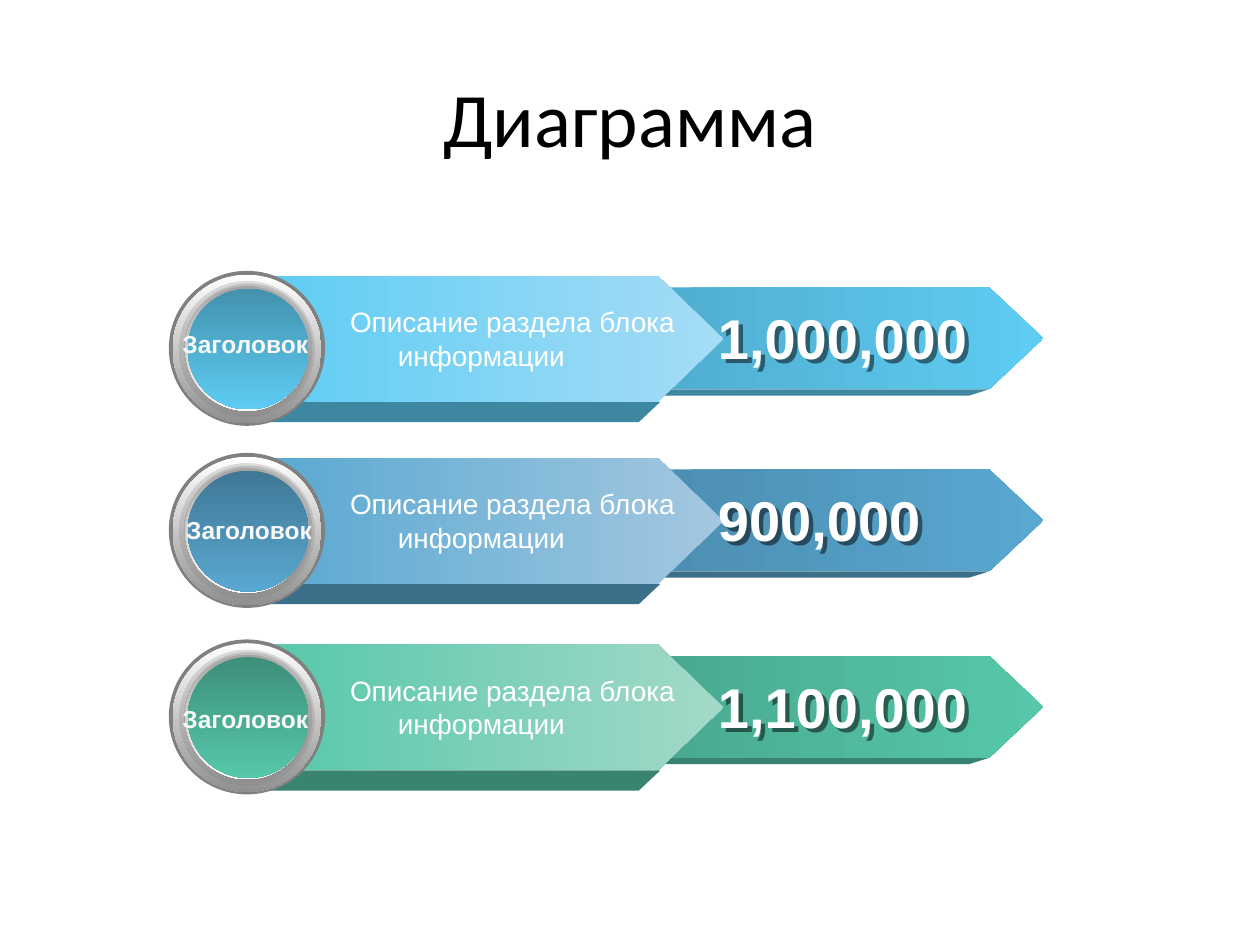
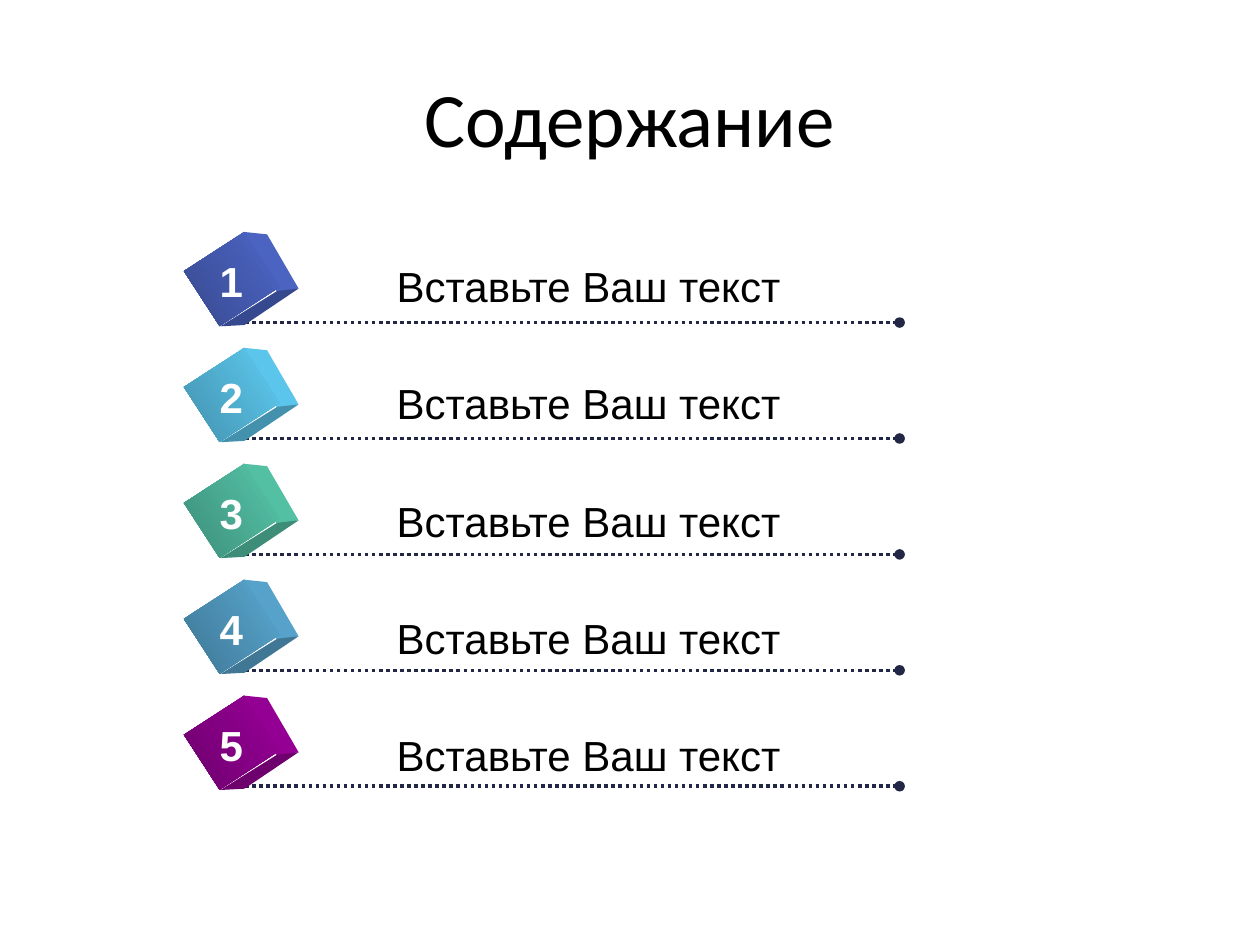
from dataclasses import dataclass

from lxml.etree import SubElement
from pptx import Presentation
from pptx.dml.color import RGBColor
from pptx.enum.dml import MSO_LINE
from pptx.enum.shapes import MSO_CONNECTOR, MSO_SHAPE
from pptx.enum.text import MSO_ANCHOR, MSO_AUTO_SIZE, PP_ALIGN
from pptx.oxml import parse_xml
from pptx.oxml.ns import nsdecls, qn
from pptx.util import Inches, Pt


@dataclass(frozen=True)
class Theme:
    blue: str = "4E67C8"
    sky: str = "5ECCF3"
    steel: str = "59A8D1"
    green: str = "56C7AA"
    purple: str = "990099"
    white: str = "FFFFFF"
    off_white: str = "F8F8F8"
    black: str = "000000"
    gray: str = "808080"
    navy: str = "212745"
    title_font: str = "Calibri"
    body_font: str = "Arial"
    title_size: int = 44
    figure_size: int = 32
    item_size: int = 24
    detail_size: int = 16
    label_size: int = 14


THEME = Theme()
PAGE_WIDTH, PAGE_HEIGHT = Inches(10), Inches(7.5)
CELL = PAGE_WIDTH // 100  # the page is a grid of 100 columns by 75 rows


@dataclass(frozen=True)
class Box:
    """A region measured in grid columns and rows."""
    left: float
    top: float
    width: float
    height: float

    def inner(self, left, top, width, height):
        return Box(self.left + left, self.top + top, width, height)

    def point(self, left, top):
        return cells(self.left + left), cells(self.top + top)

    def lengths(self):
        return [cells(n) for n in (self.left, self.top, self.width, self.height)]


def cells(count):
    return round(count * CELL)


def color_xml(color, **changes):
    children = "".join(f'<a:{name} val="{percent * 1000}"/>' for name, percent in changes.items())
    return f'<a:srgbClr val="{color}">{children}</a:srgbClr>'


def paint(shape, *colors, angle=0):
    """Fill with one colour, or with an even gradient through several."""
    if len(colors) == 1:
        tag, content = "solidFill", colors[0]
    else:
        step = 100000 // (len(colors) - 1)
        stops = "".join(f'<a:gs pos="{i * step}">{color}</a:gs>' for i, color in enumerate(colors))
        tag = "gradFill"
        content = f'<a:gsLst>{stops}</a:gsLst><a:lin ang="{angle * 60000}" scaled="1"/>'
    shape._element.spPr.append(parse_xml(f'<a:{tag} {nsdecls("a")}>{content}</a:{tag}>'))
    shape.line.fill.background()
    shape.shadow.inherit = False


def add_preset(shapes, kind, box, *colors, angle=0, adjustment=None):
    shape = shapes.add_shape(kind, *box.lengths())
    if adjustment is not None:
        shape.adjustments[0] = adjustment
    paint(shape, *colors, angle=angle)
    return shape


def add_face(page, box, corners, color):
    start, *others = [box.point(*corner) for corner in corners]
    builder = page.shapes.build_freeform(*start)
    builder.add_line_segments(others, close=True)
    paint(builder.convert_to_shape(), color)


def format_span(span, color, **formats):
    for name, value in formats.items():
        setattr(span.font, name, value)
    span.font.color.rgb = RGBColor.from_string(color)


def add_text(page, box, text, size, color, bold=False, wrap=False, align=PP_ALIGN.LEFT):
    holder = page.shapes.add_textbox(*box.lengths())
    frame = holder.text_frame
    frame.word_wrap = wrap
    frame.auto_size = MSO_AUTO_SIZE.SHAPE_TO_FIT_TEXT
    para = frame.paragraphs[0]
    para.alignment = align
    span = para.add_run()
    span.text = text
    format_span(span, color, name=THEME.body_font, size=Pt(size), bold=bold)
    return holder


def add_page(deck, title):
    page = deck.slides.add_slide(deck.slide_layouts[5])
    holder = page.shapes.title
    lengths = Box(5, 3, 90, 12.5).lengths()
    for name, value in zip(("left", "top", "width", "height"), lengths):
        setattr(holder, name, value)
    frame = holder.text_frame
    frame.vertical_anchor = MSO_ANCHOR.MIDDLE
    frame.paragraphs[0].alignment = PP_ALIGN.CENTER
    span = frame.paragraphs[0].add_run()
    span.text = title
    format_span(span, THEME.black, name=THEME.title_font, size=Pt(THEME.title_size))
    return page


def add_badge(page, box, color):
    """Metal ring around a coloured disc."""
    gray, white = THEME.gray, color_xml(THEME.white)
    discs = [
        ((0, 0, 12.4, 12.3), [color_xml(gray)]),
        ((0.3, 0.3, 11.8, 11.8), [white, color_xml(THEME.white, shade=27)]),
        ((0.8, 0.8, 10.8, 10.8), [color_xml(gray, alpha=25)]),
        ((1.2, 1, 10.2, 10.2), [color_xml(gray, alpha=30)]),
        ((1.3, 1.2, 9.8, 9.9), [color_xml(THEME.white, shade=37), white]),
        ((1.5, 1.4, 9.6, 9.6), [color_xml(color, shade=47), color_xml(color)]),
    ]
    badge = page.shapes.add_group_shape()
    for place, colors in discs:
        add_preset(badge.shapes, MSO_SHAPE.OVAL, box.inner(*place), *colors, angle=90)


def add_arrow_row(page, box, color, figure, label_place):
    base, side = color_xml(color), color_xml(color, shade=39)

    # Figure arrow and its lower edge
    add_face(page, box, [(38.5, 9.4), (65.1, 9.4), (63.5, 9.9), (38.5, 9.9)], side)
    add_preset(page.shapes, MSO_SHAPE.CHEVRON, box.inner(39.7, 1.3, 29.7, 8.1),
               color_xml(color, shade=70), base, adjustment=0.53)

    # Description arrow and its lower edge
    add_face(page, box, [(7.1, 10.4), (39, 10.4), (37.3, 12), (7.1, 12)], side)
    add_preset(page.shapes, MSO_SHAPE.PENTAGON, box.inner(7.1, 0.4, 36.9, 10),
               base, color_xml(color, tint=70), adjustment=0.52)

    # Badge and texts
    add_badge(page, box, color)
    add_text(page, box.inner(*label_place, 12, 3.4), "Заголовок",
             THEME.label_size, THEME.off_white, bold=True)
    detail = add_text(page, box.inner(13.4, 2.2, 28.6, 6.4), "Описание раздела блока информации",
                      THEME.detail_size, THEME.white, wrap=True)
    properties = detail.text_frame.paragraphs[0]._p.get_or_add_pPr()
    for name, columns in {"marL": 3.8, "indent": -3.8}.items():
        properties.set(name, str(cells(columns)))
    number = add_text(page, box.inner(42.6, 2.1, 24.6, 6.3), figure,
                      THEME.figure_size, THEME.white, bold=True, wrap=True)
    number._element.spPr.append(parse_xml(
        f'<a:effectLst {nsdecls("a")}><a:outerShdw dist="45000" dir="2700000" algn="ctr" '
        f'rotWithShape="0">{color_xml(THEME.black, alpha=50)}</a:outerShdw></a:effectLst>'))


def add_leader(page, box):
    """Dotted line that ends in a dot."""
    line = page.shapes.add_connector(
        MSO_CONNECTOR.STRAIGHT, *box.point(3.9, 7.2), *box.point(56.4, 7.2))
    line.line.color.rgb = RGBColor.from_string(THEME.navy)
    line.line.width = Pt(2)
    line.line.dash_style = MSO_LINE.ROUND_DOT
    SubElement(line.line._get_or_add_ln(), qn("a:tailEnd"), type="oval")
    SubElement(line._element.spPr, qn("a:effectLst"))


def add_cube(page, box, color, number):
    base, dark = color_xml(color), color_xml(color, shade=46)
    add_face(page, box, [(4.3, 0), (6.2, 0.2), (8.7, 4.5), (7, 4.8)], color_xml(color, shade=93))
    add_face(page, box, [(7, 4.7), (8.7, 4.5), (4.4, 7.4), (2.5, 7.5)], dark)
    front = add_preset(page.shapes, MSO_SHAPE.RECTANGLE, box.inner(0.8, 0.9, 5.2, 5.7),
                       base, dark, angle=90)
    front.rotation = 57
    add_text(page, box.inner(1.4, 1.4, 3.9, 5), str(number), THEME.item_size,
             THEME.white, bold=True, align=PP_ALIGN.CENTER)


def build_diagram(deck):
    page = add_page(deck, "Диаграмма")
    rows = [
        (21.5, THEME.sky, "1,000,000", (0.1, 4.1)),
        (35.95, THEME.steel, "900,000", (0.4, 4.45)),
        (50.75, THEME.green, "1,100,000", (0.1, 4.65)),
    ]
    for top, color, figure, label_place in rows:
        add_arrow_row(page, Box(13.4, top, 69.4, 12.3), color, figure, label_place)


def build_contents(deck):
    page = add_page(deck, "Содержание")
    colors = [THEME.blue, THEME.sky, THEME.green, THEME.steel, THEME.purple]
    for index, color in enumerate(colors):
        row = Box(15, 18.4 + 9.2 * index, 56.4, 7.5)
        add_leader(page, row)
        add_cube(page, row, color, index + 1)
        add_text(page, Box(30.5, 20.2 + 9.3 * index, 32.8, 5), "Вставьте Ваш текст",
                 THEME.item_size, THEME.black)


def main():
    deck = Presentation()
    deck.slide_width, deck.slide_height = PAGE_WIDTH, PAGE_HEIGHT
    build_diagram(deck)
    build_contents(deck)
    deck.save("out.pptx")


if __name__ == "__main__":
    main()
